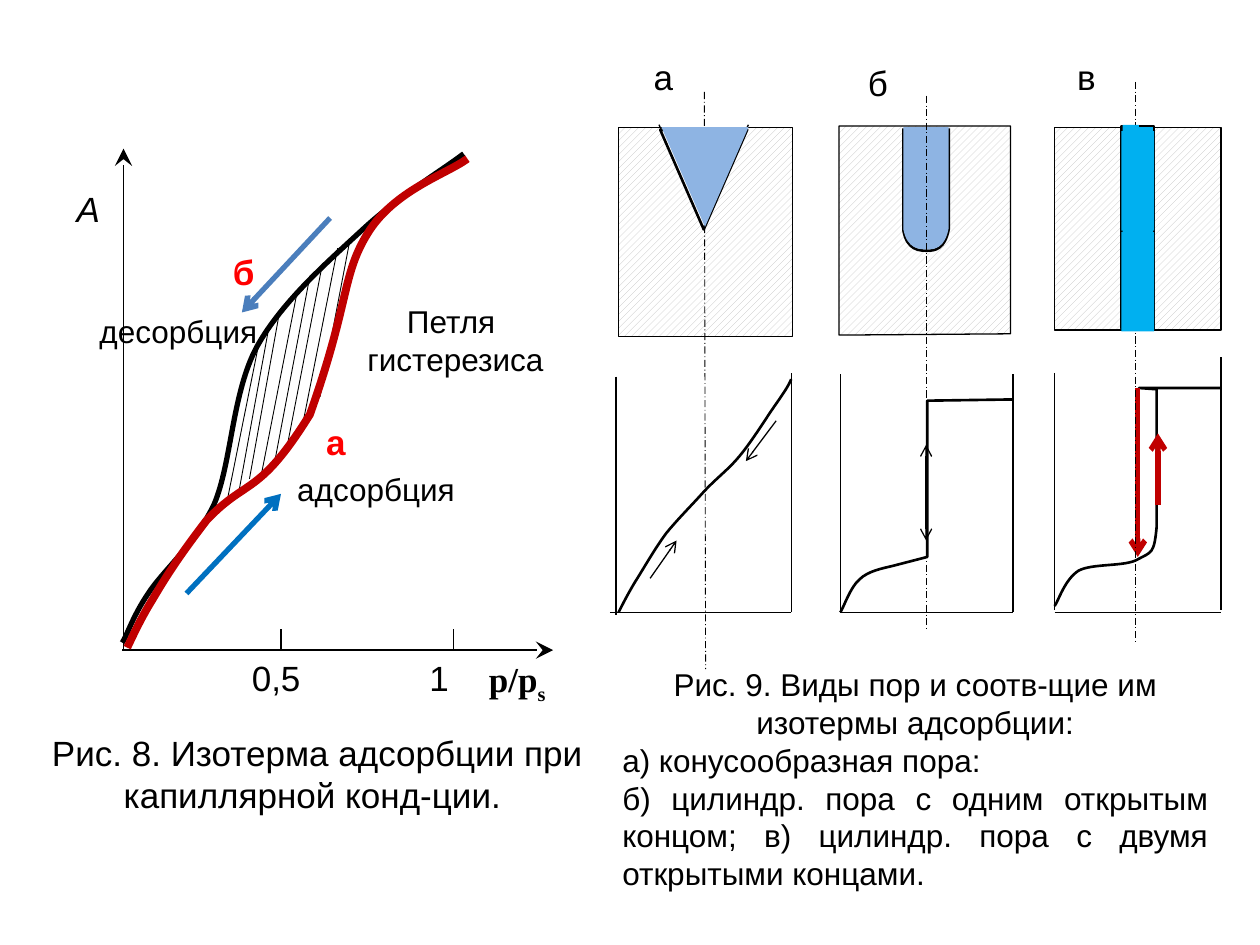
from lxml import etree
from pptx import Presentation
from pptx.dml.color import RGBColor
from pptx.enum import dml, shapes, text
from pptx.oxml import ns
from pptx.util import Inches, Pt

BLACK = RGBColor(0x00, 0x00, 0x00)
WHITE = RGBColor(0xFF, 0xFF, 0xFF)
GREY = RGBColor(0xC0, 0xC0, 0xC0)
RED = RGBColor(0xFF, 0x00, 0x00)
DARK_RED = RGBColor(0xC0, 0x00, 0x00)
PALE_BLUE = RGBColor(0x8E, 0xB4, 0xE3)
SKY = RGBColor(0x00, 0xB0, 0xF0)
BLUE = RGBColor(0x00, 0x70, 0xC0)
STEEL = RGBColor(0x4B, 0x7E, 0xBC)
HATCH = "hatch"
ALIGN = text.PP_ALIGN
KIND = shapes.MSO_SHAPE


def stroke(sp, color, width):
    """Set the outline of a shape, or leave it empty without a width."""
    if width:
        sp.line.color.rgb = color
        sp.line.width = Pt(width)
    else:
        sp.line.fill.background()
    return sp


def paint(sp, fill, width, color=BLACK):
    """Set fill and outline of a shape; None leaves either one empty."""
    sp.shadow.inherit = False
    if fill is None:
        sp.fill.background()
    elif fill == HATCH:
        sp.fill.patterned()
        sp.fill.pattern = dml.MSO_PATTERN.WIDE_UPWARD_DIAGONAL
        sp.fill.fore_color.rgb = GREY
        sp.fill.back_color.rgb = WHITE
    else:
        sp.fill.solid()
        sp.fill.fore_color.rgb = fill
    return stroke(sp, color, width)


def shape(s, box, kind, at, fill, width=None):
    """Add a preset shape placed relative to the box."""
    x, y, w, h = at
    sp = s.shapes.add_shape(kind, Inches(box[0] + x), Inches(box[1] + y), Inches(w), Inches(h))
    return paint(sp, fill, width)


def line(s, box, x1, y1, x2, y2, color=BLACK, width=0.75, head=None, tail=None, dash=False):
    """Add a straight line with optional arrowheads."""
    x, y = box[:2]
    ln = s.shapes.add_connector(shapes.MSO_CONNECTOR.STRAIGHT, Inches(x + x1), Inches(y + y1),
                                Inches(x + x2), Inches(y + y2))
    stroke(ln, color, width)
    if dash:
        ln.line.dash_style = dml.MSO_LINE.LONG_DASH_DOT
    for tag, end in (("a:headEnd", head), ("a:tailEnd", tail)):
        if end:
            size = "lg" if end == "stealth" else "med"
            etree.SubElement(ln.line._get_or_add_ln(), ns.qn(tag), type=end, w=size, len=size)
    etree.SubElement(ln._element.spPr, ns.qn("a:effectLst"))


def path(s, box, start, steps, width=1.5, fill=None, color=BLACK, close=False):
    """Add a freeform of lines (x, y) and cubic curves given by six numbers."""
    pts = [start] + [step[i:i + 2] for step in steps for i in range(0, len(step), 2)]
    pts = [(Inches(box[0] + x), Inches(box[1] + y)) for x, y in pts]
    fb = s.shapes.build_freeform(*pts[0], scale=1.0)
    fb.add_line_segments(pts[1:], close=close)
    sp = fb.convert_to_shape()
    segments = iter(list(sp._element.iter(ns.qn("a:lnTo"))))
    for step in steps:
        seg = next(segments)
        if len(step) == 6:
            seg.addprevious(curve := etree.Element(ns.qn("a:cubicBezTo")))
            for part in (seg, next(segments), next(segments)):
                curve.append(part[0])
                part.getparent().remove(part)
    return paint(sp, fill, width, color)


def label(s, box, at, content, size=20, color=BLACK, align=ALIGN.LEFT, bold=False,
          italic=False, font="Arial", inset=0.1, fill=None, wrap=True):
    """Add a text box whose lines become paragraphs."""
    x, y, w, h = at
    tb = s.shapes.add_textbox(Inches(box[0] + x), Inches(box[1] + y), Inches(w), Inches(h))
    if fill is not None:
        tb.fill.solid()
        tb.fill.fore_color.rgb = fill
    tf = tb.text_frame
    tf.word_wrap = wrap
    tf.margin_left = tf.margin_right = Inches(inset)
    tf.margin_top = tf.margin_bottom = Inches(inset / 2)
    tf.text = content
    for p in tf.paragraphs:
        p.alignment = align
        for r in p.runs:
            f = r.font
            f.name, f.size, f.bold, f.italic = font, Pt(size), bold, italic
            f.color.rgb = color
    return tf


def cone_pore(s, box):
    """Draw the cone-shaped pore and its isotherm."""
    label(s, box, (0.29, 0.39, 0.47, 0.42), "а", fill=WHITE)
    for ends in ((0.09, 2.99, 0.09, 4.88), (0.04, 4.86, 1.48, 4.86), (1.48, 4.86, 1.48, 2.96)):
        line(s, box, *ends)
    shape(s, box, KIND.RECTANGLE, (0.11, 1.01, 1.38, 1.66), HATCH, 0.75)
    line(s, box, 0.43, 0.99, 0.77, 1.73)
    line(s, box, 1.14, 0.99, 0.79, 1.73)
    shape(s, box, KIND.ISOSCELES_TRIANGLE, (0.44, 1.03, 0.69, 0.79), WHITE, 1.5).rotation = 180
    line(s, box, 0.79, 0.73, 0.8, 5.31, width=0.5, dash=True)
    path(s, box, (0.11, 4.86), [
        (0.13, 4.82, 0.18, 4.72, 0.24, 4.62), (0.31, 4.51, 0.4, 4.35, 0.49, 4.23),
        (0.58, 4.12, 0.69, 4.01, 0.78, 3.91), (0.88, 3.8, 0.98, 3.73, 1.07, 3.62),
        (1.17, 3.5, 1.28, 3.32, 1.35, 3.22), (1.42, 3.12, 1.46, 3.06, 1.48, 3.01)])
    line(s, box, 1.36, 3.34, 1.12, 3.66, tail="arrow")
    line(s, box, 0.36, 4.59, 0.57, 4.29, tail="arrow")
    shape(s, box, KIND.ISOSCELES_TRIANGLE, (0.45, 1.01, 0.69, 0.79), PALE_BLUE).rotation = 180


def closed_pore(s, box):
    """Draw the cylindrical pore with one open end and its isotherm."""
    for ends in ((0.07, 2.97, 0.07, 4.86), (0.07, 4.86, 1.44, 4.86), (1.44, 4.86, 1.44, 2.97)):
        line(s, box, *ends)
    path(s, box, (0.06, 1), [(0.06, 2.66), (1.42, 2.65), (1.42, 1)], 0.75, HATCH, close=True)
    for top, fill, width in ((1.02, WHITE, 1.5), (1.01, PALE_BLUE, None)):
        path(s, box, (0.57, top), [
            (0.57, top + 0.81),
            (0.6, top + 0.97, 0.7, top + 0.97, 0.76, top + 0.97),
            (0.82, top + 0.97, 0.9, top + 0.96, 0.93, top + 0.8),
            (0.93, top)], width, fill)
    path(s, box, (0.07, 4.86), [
        (0.1, 4.81, 0.15, 4.66, 0.22, 4.6), (0.29, 4.53, 0.41, 4.51, 0.49, 4.49),
        (0.76, 4.42), (0.76, 3.18), (1.44, 3.17)])
    line(s, box, 0.75, 3.53, 0.75, 4.29, head="arrow", tail="arrow")
    line(s, box, 0.75, 0.76, 0.75, 5.01, width=0.5, dash=True)
    label(s, box, (0.19, 0.44, 0.54, 0.39), "б", fill=WHITE)


def open_pore(s, box):
    """Draw the cylindrical pore with two open ends and its isotherm."""
    label(s, box, (0.15, 0.39, 0.62, 0.41), "в")
    for ends in ((0.07, 2.96, 0.07, 4.84), (0.07, 4.86, 1.39, 4.86), (1.39, 4.84, 1.39, 2.83)):
        line(s, box, *ends)
    path(s, box, (0.07, 4.81), [
        (0.1, 4.77, 0.15, 4.6, 0.26, 4.53), (0.37, 4.47, 0.63, 4.5, 0.73, 4.44),
        (0.84, 4.38, 0.86, 4.4, 0.88, 4.18), (0.88, 3.09), (0.74, 3.08), (1.39, 3.08)])
    line(s, box, 0.73, 3.08, 0.73, 4.42, DARK_RED, 3, tail="arrow")
    line(s, box, 0.89, 4.01, 0.89, 3.44, DARK_RED, 3, tail="arrow")
    shape(s, box, KIND.RECTANGLE, (0.07, 1.01, 1.32, 1.61), HATCH, 0.75)
    shape(s, box, KIND.RECTANGLE, (0.6, 1, 0.26, 1.61), WHITE, 1.5)
    for edge, middle in ((2.6, 2.54), (1.01, 1.09)):
        path(s, box, (0.59, edge), [(0.62, edge, 0.69, middle, 0.73, middle),
                                    (0.78, middle, 0.82, edge, 0.85, edge)], 0.75)
    line(s, box, 0.71, 0.65, 0.71, 5.1, width=0.5, dash=True)
    for at in ((0.61, 0.99, 0.13, 1.61), (0.72, 1.01, 0.13, 1.61),
               (0.6, 1.04, 0.26, 0.79), (0.6, 1.84, 0.26, 0.79)):
        shape(s, box, KIND.RECTANGLE, at, SKY)


def hysteresis(s, box):
    """Draw the capillary condensation isotherm with its hysteresis loop."""
    tf = label(s, box, (0.28, 4.76, 4.56, 0.81),
               "Рис. 8. Изотерма адсорбции при капиллярной конд-ции. ", align=ALIGN.CENTER)
    tf.margin_right = Inches(0.18)
    label(s, box, (0.51, 0.44, 0.44, 0.56), "A", italic=True)
    line(s, box, 0.98, 4.15, 0.98, 0.18, tail="stealth")
    line(s, box, 0.97, 4.16, 4.39, 4.16, tail="stealth")
    for x, left, value in ((2.23, 1.9, "0,5"), (3.6, 3.31, "1")):
        line(s, box, x, 4.16, x, 3.99)
        label(s, box, (left, 4.16, 0.78, 0.58), value)
    tf = label(s, box, (3.88, 4.22, 0.85, 0.65), "р/р", bold=True, font="Times New Roman", inset=0)
    r = tf.paragraphs[0].add_run()
    r.text = "s"
    r.font.name, r.font.size, r.font.bold = "Times New Roman", Pt(20), True
    r.font.color.rgb = BLACK
    r.font._element.set("baseline", "-25000")
    path(s, box, (0.97, 4.1), [
        (1.01, 4.04, 1.05, 3.9, 1.17, 3.72), (1.29, 3.53, 1.55, 3.32, 1.7, 3),
        (1.84, 2.67, 1.84, 2.12, 2.04, 1.75), (2.24, 1.39, 2.61, 1.07, 2.88, 0.82),
        (3.16, 0.56, 3.51, 0.35, 3.68, 0.22)], 3)
    for ends in ((2.05, 1.75, 1.81, 2.94), (2.13, 1.62, 1.9, 2.88), (2.22, 1.47, 1.98, 2.8),
                 (2.36, 1.31, 2.07, 2.79), (2.46, 1.19, 2.17, 2.72), (2.56, 1.09, 2.27, 2.59),
                 (2.68, 0.97, 2.39, 2.43), (2.78, 0.89, 2.54, 2.15)):
        line(s, box, *ends, width=0.5)
    path(s, box, (1.01, 4.14), [
        (1.04, 4.08, 1.11, 3.92, 1.21, 3.76), (1.31, 3.59, 1.41, 3.43, 1.64, 3.13),
        (1.96, 2.79, 2.05, 2.95, 2.46, 2.29), (2.78, 1.39, 2.71, 1.19, 2.92, 0.85),
        (3.13, 0.51, 3.55, 0.38, 3.71, 0.26)], 4.5, color=DARK_RED)
    label(s, box, (2.49, 2.29, 0.41, 0.57), "а", color=RED, bold=True)
    label(s, box, (2.26, 2.68, 1.98, 0.52), "адсорбция", 18)
    line(s, box, 1.48, 3.71, 2.23, 2.92, BLUE, 3, tail="arrow")
    label(s, box, (1.75, 0.94, 0.42, 0.68), "б", color=RED, bold=True)
    label(s, box, (0.66, 1.43, 1.48, 0.52), "десорбция", 18, align=ALIGN.RIGHT)
    line(s, box, 2.62, 0.73, 1.92, 1.48, STEEL, 3, tail="arrow")
    label(s, box, (2.81, 1.35, 1.61, 0.71), "Петля \vгистерезиса", 18, align=ALIGN.CENTER, wrap=False)


def pore_caption(s, box):
    """Write the caption under the pore panels."""
    tf = label(s, box, (0, 0, box[2], box[3]),
               "Рис. 9. Виды пор и соотв-щие им изотермы адсорбции:\n"
               "а) конусообразная пора: \n"
               "б) цилиндр. пора с одним открытым концом; в) цилиндр. пора с двумя открытыми концами.",
               18, align=ALIGN.JUSTIFY, fill=WHITE)
    tf.margin_right = Inches(0.17)
    tf.paragraphs[0].alignment = ALIGN.CENTER


def main():
    """Build the slide and save it."""
    prs = Presentation()
    prs.slide_width, prs.slide_height = Inches(10), Inches(7.5)
    s = prs.slides.add_slide(prs.slide_layouts[6])
    pore_caption(s, (4.84, 5.23, 4.92, 1.9))
    for draw, left in ((closed_pore, 6.6), (open_pore, 8.3), (cone_pore, 4.8)):
        draw(s, (left, 0, 1.5, 5.31))
    hysteresis(s, (0, 1, 4.84, 5.57))
    prs.save("out.pptx")


if __name__ == "__main__":
    main()
